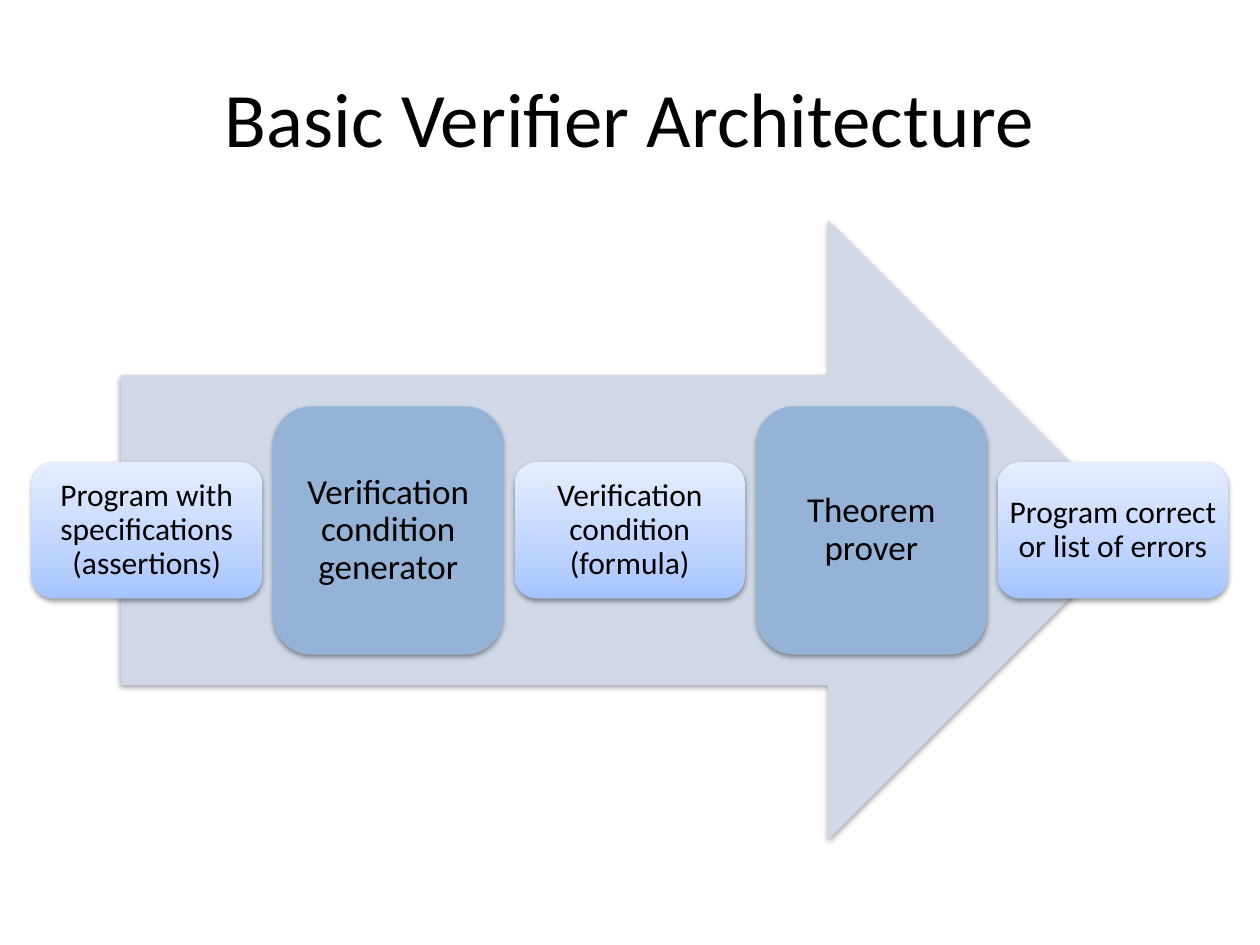
from copy import deepcopy

from lxml.etree import SubElement
from pptx import Presentation
from pptx.dml.color import RGBColor
from pptx.enum.shapes import MSO_SHAPE as Shape
from pptx.enum.text import MSO_ANCHOR as Anchor, PP_ALIGN as Align
from pptx.oxml.ns import qn
from pptx.util import Inches, Pt

TITLE = "Basic Verifier Architecture"
STAGES = [
    ("data", "Program with specifications (assertions)"),
    ("tool", "Verification condition generator"),
    ("data", "Verification condition (formula)"),
    ("tool", "Theorem prover"),
    ("data", "Program correct or list of errors"),
]
STYLES = {
    "data": {"height": 1.08, "size": 18, "inset": 0.02},
    "tool": {"height": 1.97, "size": 20, "inset": 0},
}
COLORS = {"text": "000000", "arrow": "D0D8E8", "tool": "95B3D7", "shadow": "000000"}
DATA_GRADIENT = [(0, "A4C4FF"), (0.35, "BFD4FF"), (1, "E6EEFF")]
FONT = "Calibri"
LEFT, STEP, STAGE_WIDTH, MIDDLE = 0.25, 1.917, 1.83, 4.21


def rgb(value):
    return RGBColor.from_string(value)


def format_text(frame, text, size):
    frame.text = text
    frame.word_wrap = True
    frame.vertical_anchor = Anchor.MIDDLE
    paragraph = frame.paragraphs[0]
    paragraph.alignment = Align.CENTER
    paragraph.font.name = FONT
    paragraph.font.size = Pt(size)
    paragraph.font.color.rgb = rgb(COLORS["text"])
    return paragraph


def add_shadow(shape):
    shape.shadow.inherit = False
    effects = shape._element.spPr.find(qn("a:effectLst"))
    shadow = SubElement(effects, qn("a:outerShdw"), blurRad=str(Pt(3.1)),
                        dist=str(Pt(1.6)), dir="5400000", rotWithShape="0")
    color = SubElement(shadow, qn("a:srgbClr"), val=COLORS["shadow"])
    SubElement(color, qn("a:alpha"), val="38000")


def fill_gradient(shape):
    shape.fill.gradient()
    shape.fill.gradient_angle = 90
    stop_list = next(shape._element.spPr.iter(qn("a:gsLst")))
    stop_list.append(deepcopy(stop_list[0]))
    for stop, (position, color) in zip(shape.fill.gradient_stops, DATA_GRADIENT):
        stop.position = position
        stop.color.rgb = rgb(color)


def add_block(slide, kind, left, width, height, color):
    block = slide.shapes.add_shape(kind, Inches(left), Inches(MIDDLE - height / 2),
                                   Inches(width), Inches(height))
    block.fill.solid()
    block.fill.fore_color.rgb = rgb(color)
    block.line.fill.background()
    add_shadow(block)
    return block


def add_stage(slide, index, role, text):
    style = STYLES[role]
    stage = add_block(slide, Shape.ROUNDED_RECTANGLE, LEFT + index * STEP,
                      STAGE_WIDTH, style["height"], COLORS["tool"])
    if role == "data":
        fill_gradient(stage)
    frame = stage.text_frame
    frame.margin_left = frame.margin_right = Inches(style["inset"])
    frame.margin_top = frame.margin_bottom = Inches(style["inset"])
    format_text(frame, text, style["size"]).line_spacing = 0.9


def main():
    """Build the verifier architecture slide."""
    deck = Presentation()
    deck.slide_width, deck.slide_height = Inches(10), Inches(7.5)
    slide = deck.slides.add_slide(deck.slide_layouts[5])

    title = slide.shapes.title
    title.left, title.top = Inches(0.5), Inches(0.3)
    title.width, title.height = Inches(9), Inches(1.25)
    format_text(title.text_frame, TITLE, 44)

    add_block(slide, Shape.RIGHT_ARROW, 0.96, 8.07, 4.92, COLORS["arrow"])
    for index, (role, text) in enumerate(STAGES):
        add_stage(slide, index, role, text)

    deck.save("out.pptx")


if __name__ == "__main__":
    main()
